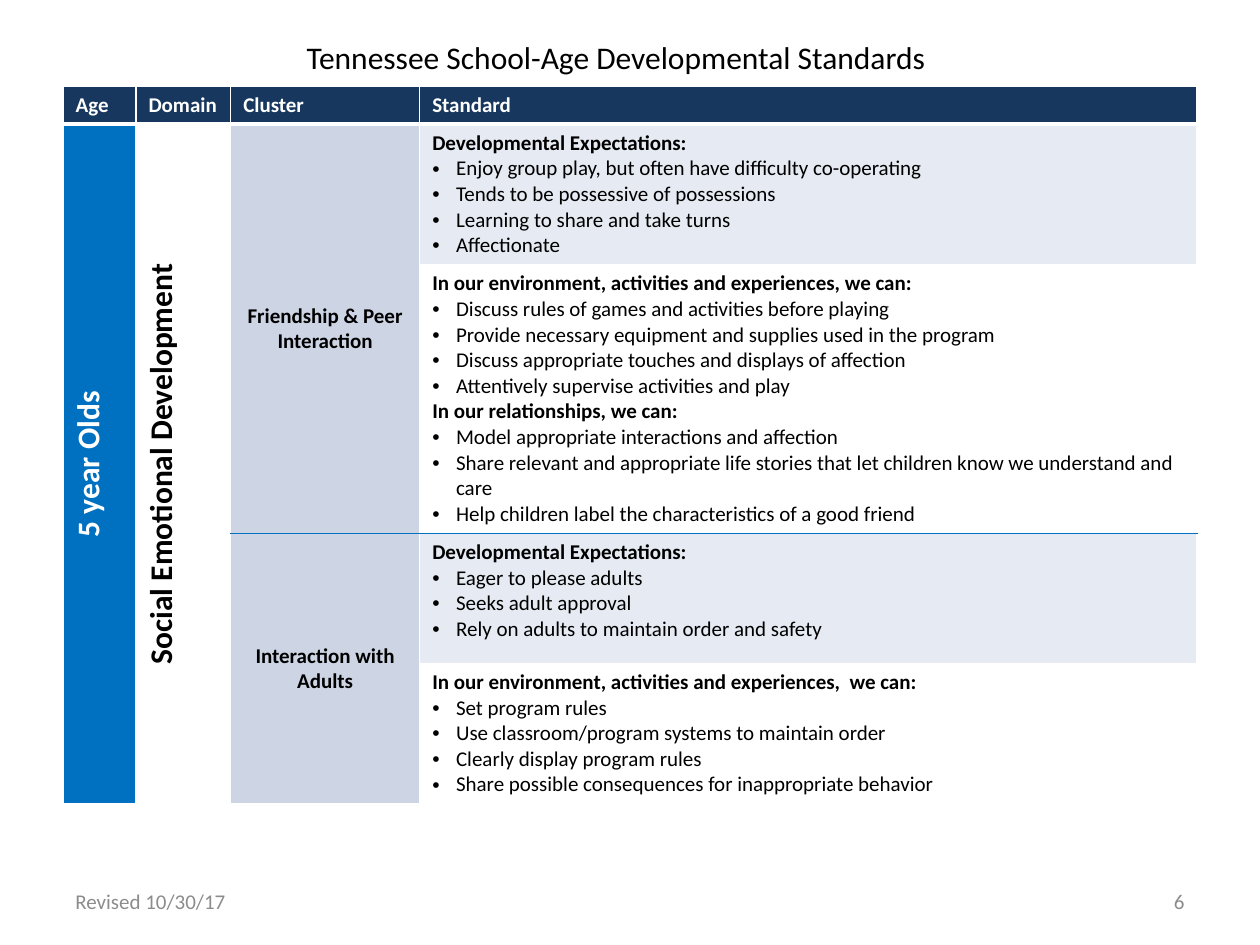
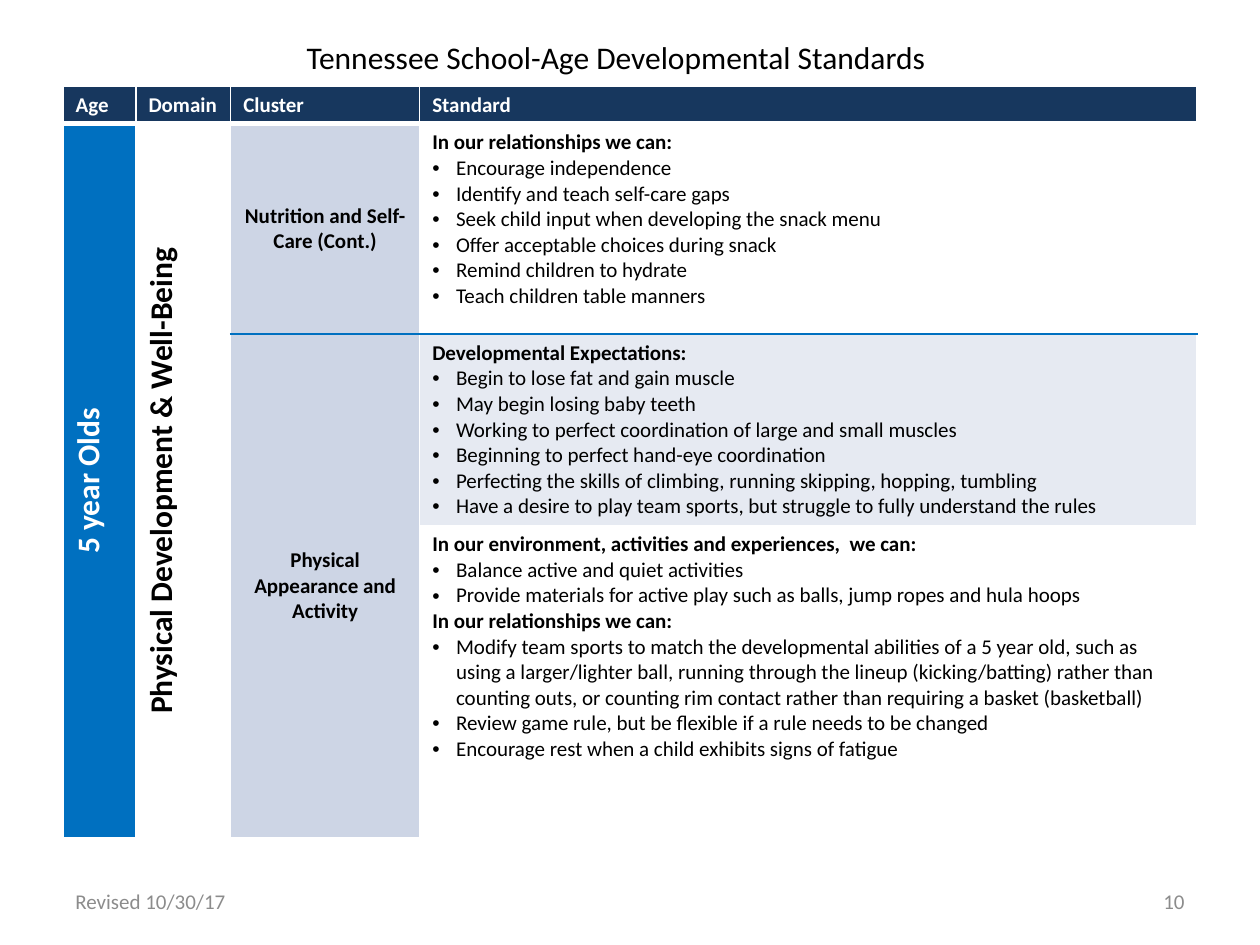
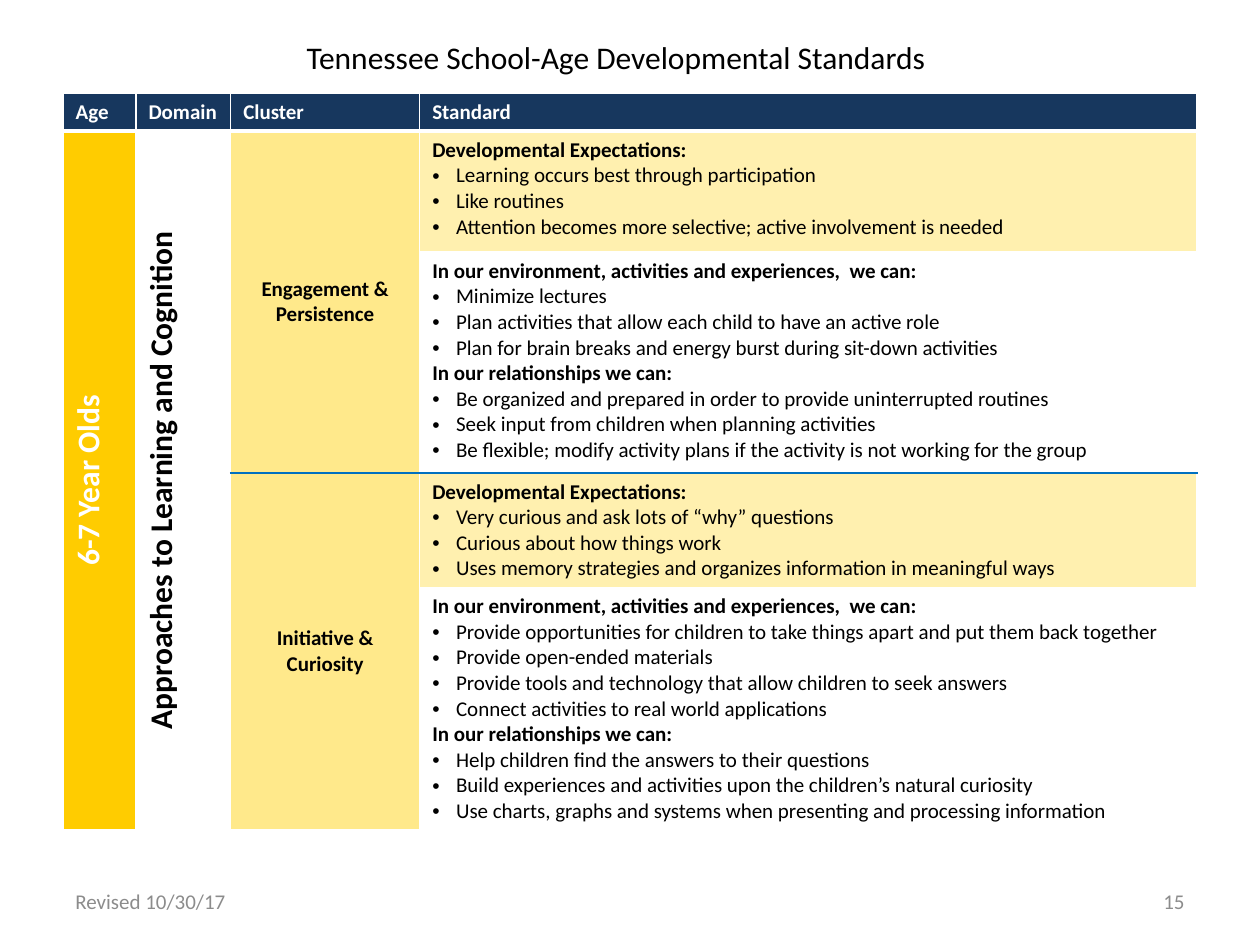
from dataclasses import dataclass

from lxml.etree import SubElement
from pptx import Presentation
from pptx.dml.color import RGBColor
from pptx.enum.text import MSO_ANCHOR, PP_ALIGN
from pptx.oxml.ns import qn
from pptx.util import Cm, Pt

COLORS = {
    "header": "17375E",
    "divider": "0070C0",
    "white": "FFFFFF",
    "black": "000000",
    "footer": "8C8C8C",
}
PALETTES = {
    "blue": {"age": "0070C0", "cluster": "CDD5E5", "expectations": "E6EAF2"},
    "yellow": {"age": "FFCC00", "cluster": "FFE98B", "expectations": "FFF0AF"},
}
FONT = "Calibri"
BODY = {"size": Pt(12), "bold": False}
STRONG = {"size": Pt(12), "bold": True}
LARGE = {"size": Pt(18), "bold": False}
LARGE_STRONG = {"size": Pt(18), "bold": True}

TITLE = "Tennessee School-Age Developmental Standards"
REVISION = "Revised 10/30/17"
HEADINGS = ["Age", "Domain", "Cluster", "Standard"]
COLUMN_WIDTHS = [1.47, 1.91, 3.81, 15.67]
HEADER_HEIGHT = 0.76
MARGIN = 1.27
BULLET_INDENT = Cm(0.48)

EXPECTATIONS = "Developmental Expectations:"
ENVIRONMENT = "In our environment, activities and experiences,  we can:"
RELATIONSHIPS = "In our relationships we can:"


@dataclass
class Standard:
    """One row of the Standard column: its height in cm and bullets by heading."""
    height: float
    points: dict


@dataclass
class Page:
    number: int
    palette: str
    top: float
    age: str
    domain: str
    clusters: dict


PAGES = [
    Page(6, "blue", 1.73, "5 year Olds", "Social Emotional Development", {
        "Friendship & Peer Interaction": [
            Standard(2.83, {EXPECTATIONS: [
                "Enjoy group play, but often have difficulty co-operating",
                "Tends to be possessive of possessions",
                "Learning to share and take turns",
                "Affectionate",
            ]}),
            Standard(5.41, {
                "In our environment, activities and experiences, we can:": [
                    "Discuss rules of games and activities before playing",
                    "Provide necessary equipment and supplies used in the program",
                    "Discuss appropriate touches and displays of affection",
                    "Attentively supervise activities and play",
                ],
                "In our relationships, we can:": [
                    "Model appropriate interactions and affection",
                    "Share relevant and appropriate life stories that let children "
                    "know we understand and care",
                    "Help children label the characteristics of a good friend",
                ],
            }),
        ],
        "Interaction with Adults": [
            Standard(2.62, {EXPECTATIONS: [
                "Eager to please adults",
                "Seeks adult approval",
                "Rely on adults to maintain order and safety",
            ]}),
            Standard(2.84, {ENVIRONMENT: [
                "Set program rules",
                "Use classroom/program systems to maintain order",
                "Clearly display program rules",
                "Share possible consequences for inappropriate behavior",
            ]}),
        ],
    }),
    Page(10, "blue", 1.73, "5 year Olds", "Physical Development & Well-Being", {
        "Nutrition and Self-Care (Cont.)": [
            Standard(4.24, {RELATIONSHIPS: [
                "Encourage independence",
                "Identify and teach self-care gaps",
                "Seek child input when developing the snack menu",
                "Offer acceptable choices during snack",
                "Remind children to hydrate",
                "Teach children table manners",
            ]}),
        ],
        "Physical Appearance and Activity": [
            Standard(3.86, {EXPECTATIONS: [
                "Begin to lose fat and gain muscle",
                "May begin losing baby teeth",
                "Working to perfect coordination of large and small muscles",
                "Beginning to perfect hand-eye coordination",
                "Perfecting the skills of climbing, running skipping, hopping, tumbling",
                "Have a desire to play team sports, but struggle to fully "
                "understand the rules",
            ]}),
            Standard(6.3, {
                ENVIRONMENT: [
                    "Balance active and quiet activities",
                    "Provide materials for active play such as balls, jump ropes "
                    "and hula hoops",
                ],
                RELATIONSHIPS: [
                    "Modify team sports to match the developmental abilities of a "
                    "5 year old, such as using a larger/lighter ball, running through "
                    "the lineup (kicking/batting) rather than counting outs, or "
                    "counting rim contact rather than requiring a basket (basketball)",
                    "Review game rule, but be flexible if a rule needs to be changed",
                    "Encourage rest when a child exhibits signs of fatigue",
                ],
            }),
        ],
    }),
    Page(15, "yellow", 1.88, "6-7 Year Olds", "Approaches to Learning and Cognition", {
        "Engagement & Persistence": [
            Standard(2.44, {EXPECTATIONS: [
                "Learning occurs best through participation",
                "Like routines",
                "Attention becomes more selective; active involvement is needed",
            ]}),
            Standard(4.45, {
                ENVIRONMENT: [
                    "Minimize lectures",
                    "Plan activities that allow each child to have an active role",
                    "Plan for brain breaks and energy burst during sit-down activities",
                ],
                RELATIONSHIPS: [
                    "Be organized and prepared in order to provide uninterrupted routines",
                    "Seek input from children when planning activities",
                    "Be flexible; modify activity plans if the activity is not "
                    "working for the group",
                ],
            }),
        ],
        "Initiative & Curiosity": [
            Standard(2.31, {EXPECTATIONS: [
                "Very curious and ask lots of “why” questions",
                "Curious about how things work",
                "Uses memory strategies and organizes information in meaningful ways",
            ]}),
            Standard(4.88, {
                ENVIRONMENT: [
                    "Provide opportunities for children to take things apart and "
                    "put them back together",
                    "Provide open-ended materials",
                    "Provide tools and technology that allow children to seek answers",
                    "Connect activities to real world applications",
                ],
                RELATIONSHIPS: [
                    "Help children find the answers to their questions",
                    "Build experiences and activities upon the children’s natural curiosity",
                    "Use charts, graphs and systems when presenting and "
                    "processing information",
                ],
            }),
        ],
    }),
]


def write(paragraph, text, style, color="000000", align=PP_ALIGN.LEFT):
    paragraph.alignment = align
    run = paragraph.add_run()
    run.text = text
    for attribute, value in {"name": FONT, **style}.items():
        setattr(run.font, attribute, value)
    run.font.color.rgb = RGBColor.from_string(color)


def add_label(slide, left, top, width, text, style, color,
              align=PP_ALIGN.LEFT, anchor=MSO_ANCHOR.TOP):
    label = slide.shapes.add_textbox(Cm(left), Cm(top), Cm(width), Cm(1.02))
    label.text_frame.word_wrap = True
    label.text_frame.vertical_anchor = anchor
    write(label.text_frame.paragraphs[0], text, style, color, align)


def add_bullet(paragraph):
    properties = paragraph._p.get_or_add_pPr()
    properties.set("marL", str(BULLET_INDENT))
    properties.set("indent", str(-BULLET_INDENT))
    SubElement(properties, qn("a:buFont"), typeface="Arial")
    SubElement(properties, qn("a:buChar"), char="•")


def set_borders(cell, top=COLORS["white"], bottom=COLORS["white"], bottom_width=1):
    white = COLORS["white"]
    edges = {"L": (white, 1), "R": (white, 1), "T": (top, 1), "B": (bottom, bottom_width)}
    for side, (color, width) in edges.items():
        line = SubElement(cell._tc.get_or_add_tcPr(), qn(f"a:ln{side}"), w=str(Pt(width)))
        SubElement(SubElement(line, qn("a:solidFill")), qn("a:srgbClr"), val=color)


def fill_cell(cell, color):
    cell.fill.solid()
    cell.fill.fore_color.rgb = RGBColor.from_string(color)


def write_centered(cell, text, style, color=COLORS["black"], anchor=MSO_ANCHOR.MIDDLE):
    cell.vertical_anchor = anchor
    write(cell.text_frame.paragraphs[0], text, style, color, PP_ALIGN.CENTER)


def write_upward(cell, text, color, anchor):
    cell._tc.get_or_add_tcPr().set("vert", "vert270")
    write_centered(cell, text, LARGE_STRONG, color, anchor)


def write_standard(cell, points):
    lines = []
    for heading, bullets in points.items():
        lines += [(heading, STRONG)] + [(bullet, BODY) for bullet in bullets]
    for index, (text, style) in enumerate(lines):
        frame = cell.text_frame
        paragraph = frame.add_paragraph() if index else frame.paragraphs[0]
        write(paragraph, text, style)
        if style is BODY:
            add_bullet(paragraph)


def fill_header(table):
    for column, heading in enumerate(HEADINGS):
        cell = table.cell(0, column)
        set_borders(cell, bottom_width=3)
        fill_cell(cell, COLORS["header"])
        write(cell.text_frame.paragraphs[0], heading, STRONG, COLORS["white"])


def fill_cluster(table, first, name, standards, palette):
    """Fill the rows of one cluster, ruled off from its neighbours; return the next row."""
    last = first + len(standards) - 1
    for row, standard in enumerate(standards, first):
        after_divider = row == first and row > 1
        before_divider = row == last and row < len(table.rows) - 1
        for column in (2, 3):
            set_borders(table.cell(row, column),
                        COLORS["divider" if after_divider else "white"],
                        COLORS["divider" if before_divider else "white"])
        fill_cell(table.cell(row, 2), palette["cluster"])
        expected = EXPECTATIONS in standard.points
        fill_cell(table.cell(row, 3),
                  palette["expectations"] if expected else COLORS["white"])
        write_standard(table.cell(row, 3), standard.points)
    if last > first:
        table.cell(first, 2).merge(table.cell(last, 2))
    write_centered(table.cell(first, 2), name, STRONG)
    return last + 1


def fill_age_and_domain(table, page, palette):
    last = len(table.rows) - 1
    for row in range(1, last + 1):
        for column in (0, 1):
            set_borders(table.cell(row, column))
        fill_cell(table.cell(row, 0), palette["age"])
        table.cell(row, 1).fill.background()
    for column in (0, 1):
        table.cell(1, column).merge(table.cell(last, column))
    write_upward(table.cell(1, 0), page.age, COLORS["white"], MSO_ANCHOR.TOP)
    write_upward(table.cell(1, 1), page.domain, COLORS["black"], MSO_ANCHOR.MIDDLE)


def add_standards_table(slide, page):
    heights = [HEADER_HEIGHT] + [standard.height for standards in page.clusters.values()
                                 for standard in standards]
    table = slide.shapes.add_table(
        len(heights), len(HEADINGS), Cm(MARGIN), Cm(page.top),
        Cm(sum(COLUMN_WIDTHS)), Cm(sum(heights))).table
    table.horz_banding = False
    for column, width in zip(table.columns, COLUMN_WIDTHS):
        column.width = Cm(width)
    for row, height in zip(table.rows, heights):
        row.height = Cm(height)
    palette = PALETTES[page.palette]
    fill_header(table)
    fill_age_and_domain(table, page, palette)
    next_row = 1
    for name, standards in page.clusters.items():
        next_row = fill_cluster(table, next_row, name, standards, palette)


def add_page(presentation, page):
    slide = presentation.slides.add_slide(presentation.slide_layouts[6])
    add_standards_table(slide, page)
    add_label(slide, 5.93, 0.64, 13.55, TITLE, LARGE, COLORS["black"])
    footers = [(MARGIN, REVISION, PP_ALIGN.LEFT), (18.2, str(page.number), PP_ALIGN.RIGHT)]
    for left, text, align in footers:
        add_label(slide, left, 17.65, 5.93, text, BODY, COLORS["footer"],
                  align, MSO_ANCHOR.MIDDLE)


def main():
    presentation = Presentation()
    presentation.slide_width = Cm(25.4)
    presentation.slide_height = Cm(19.05)
    for page in PAGES:
        add_page(presentation, page)
    presentation.save("out.pptx")


if __name__ == "__main__":
    main()
